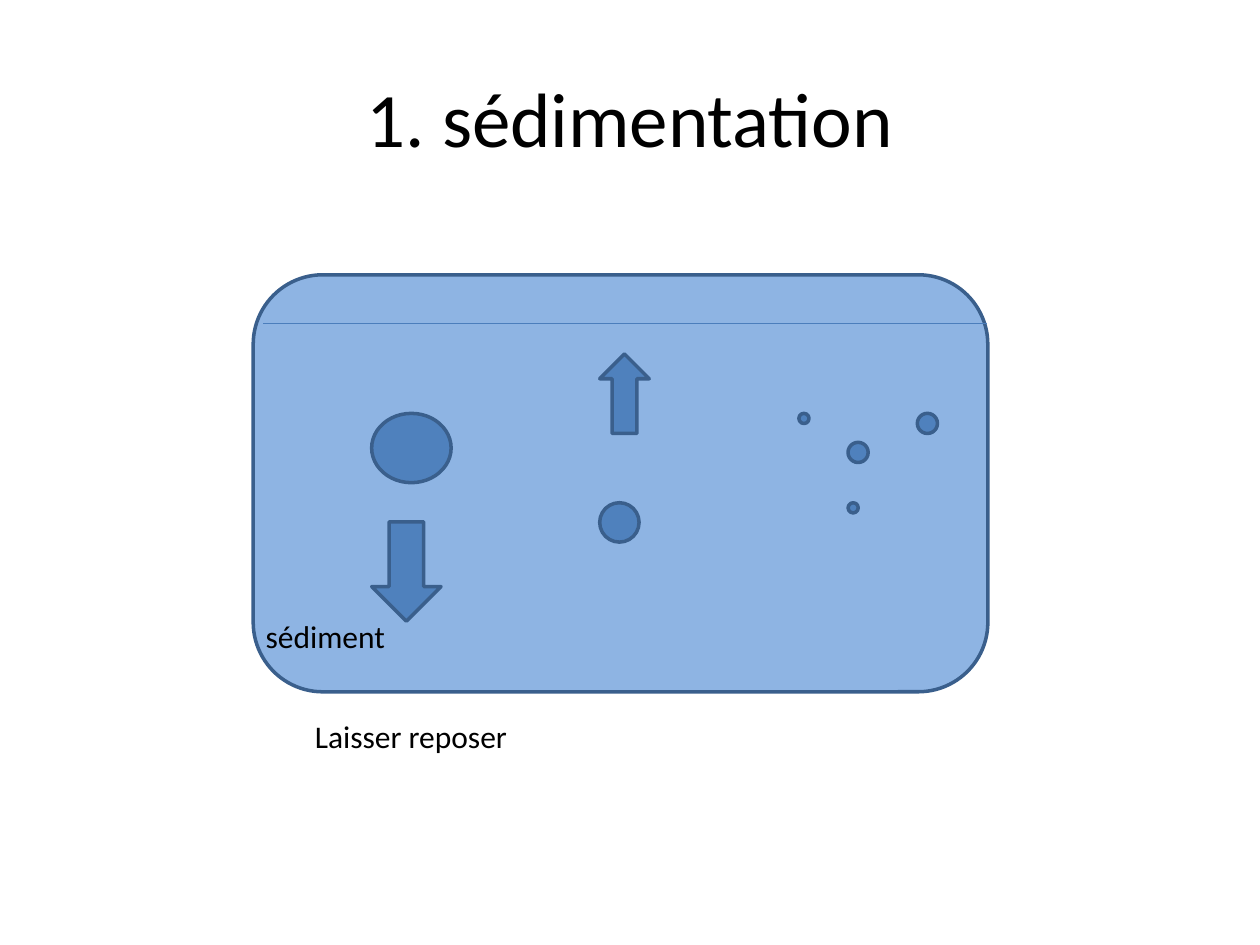
from lxml import etree
from pptx import Presentation
from pptx.dml.color import RGBColor
from pptx.enum.shapes import MSO_CONNECTOR as CONN, MSO_SHAPE as SHAPE
from pptx.enum.text import MSO_ANCHOR as ANCHOR, MSO_AUTO_SIZE as AUTO, PP_ALIGN as ALIGN
from pptx.oxml.ns import qn
from pptx.util import Pt

WATER, PARTICLE, EDGE, SURFACE, BLACK = "8EB4E3", "4F81BD", "3A5F8C", "4B7EBC", "000000"


def color(value):
    return RGBColor.from_string(value)


def set_text(sp, text, size, anchor, align):
    tf = sp.text_frame
    tf.text = text
    for name, value in {"word_wrap": True, "vertical_anchor": anchor}.items():
        setattr(tf, name, value)
    p = tf.paragraphs[0]
    p.alignment = align
    for name, value in {"name": "Calibri", "size": Pt(size)}.items():
        setattr(p.font, name, value)
    p.font.color.rgb = color(BLACK)


def add_title(s, box, text):
    sp = s.shapes.title
    for name, value in zip(("left", "top", "width", "height"), box):
        setattr(sp, name, Pt(value))
    set_text(sp, text, 44, ANCHOR.MIDDLE, ALIGN.CENTER)


def add_label(s, box, text):
    sp = s.shapes.add_textbox(*map(Pt, box))
    set_text(sp, text, 18, ANCHOR.TOP, ALIGN.LEFT)
    sp.text_frame.auto_size = AUTO.SHAPE_TO_FIT_TEXT


def add_solid(s, kind, box, fill, rotation=0):
    sp = s.shapes.add_shape(kind, *map(Pt, box))
    sp.shadow.inherit = False
    sp.rotation = rotation
    sp.fill.solid()
    sp.fill.fore_color.rgb = color(fill)
    sp.line.color.rgb = color(EDGE)
    sp.line.width = Pt(2)


def add_surface(s, x1, x2, y):
    line = s.shapes.add_connector(CONN.STRAIGHT, Pt(x1), Pt(y), Pt(x2), Pt(y))
    line.line.color.rgb = color(SURFACE)
    line.line.width = Pt(0.75)
    etree.SubElement(line._element.spPr, qn("a:effectLst"))


def add_basin(s, box):
    left, top, width, height = box
    add_solid(s, SHAPE.ROUNDED_RECTANGLE, box, WATER)
    parts = [
        (SHAPE.OVAL, 67.7, 79.2, 45.4, 39.6, 0),
        (SHAPE.OVAL, 198, 130.3, 22.5, 22.5, 0),
        (SHAPE.DOWN_ARROW, 67.7, 141.2, 39.6, 56.8, 0),
        (SHAPE.DOWN_ARROW, 198, 45.3, 28.3, 45.4, 180),
    ]
    grains = [(311.8, 79.2, 5.8), (339.9, 95.8, 11.5), (379.5, 79.2, 11.5), (339.9, 130.3, 5.8)]
    parts += [(SHAPE.OVAL, x, y, d, d, 0) for x, y, d in grains]
    add_surface(s, left + 5.8, left + width - 0.7, top + 28)
    for kind, x, y, w, h, rotation in parts:
        add_solid(s, kind, (left + x, top + y, w, h), PARTICLE, rotation)
    add_label(s, (left, top + 192.2, 232.6, 29), "sédiment")


def main():
    prs = Presentation()
    prs.slide_width, prs.slide_height = Pt(720), Pt(540)
    s = prs.slides.add_slide(prs.slide_layouts[5])
    add_title(s, (36, 21.6, 648, 90), "1. sédimentation")
    add_basin(s, (144.7, 157, 419.8, 238.3))
    add_label(s, (172.8, 406.1, 351.4, 29), "Laisser reposer")
    prs.save("out.pptx")


if __name__ == "__main__":
    main()
